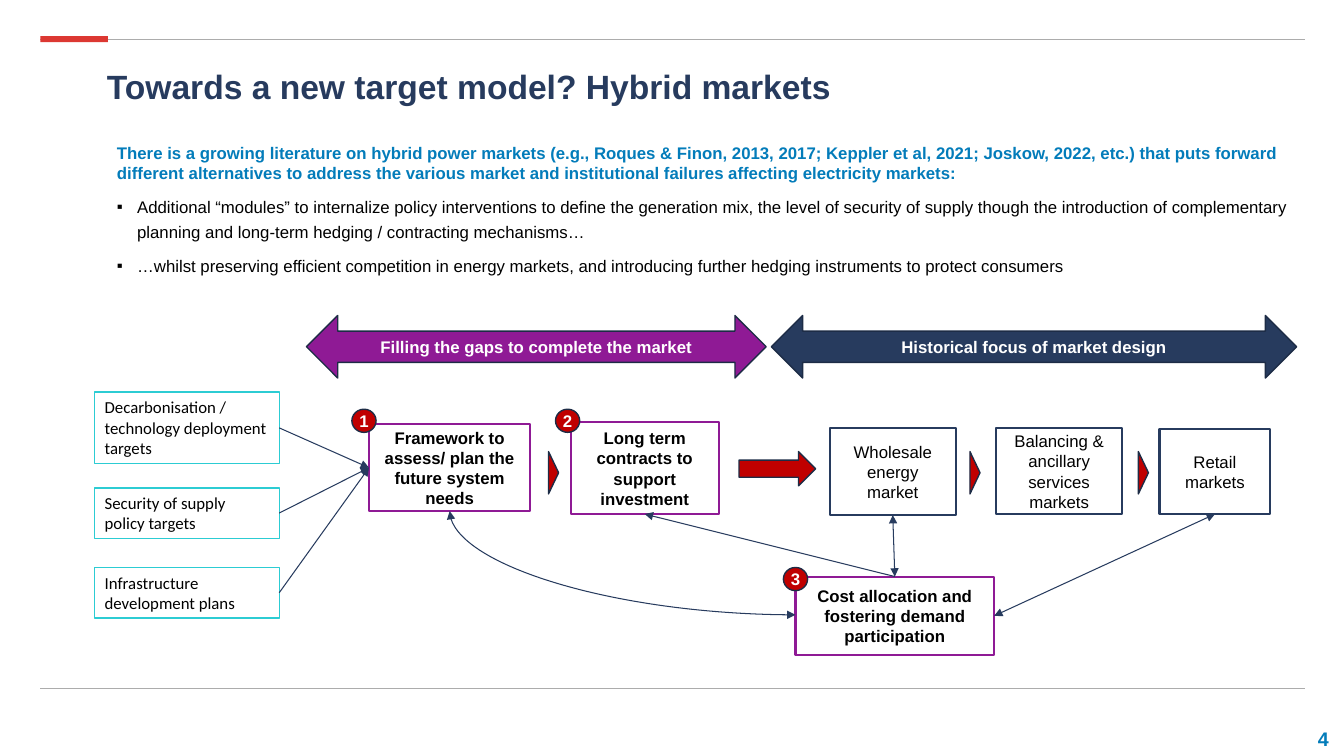
"""Build the slide on hybrid electricity markets."""
from dataclasses import dataclass

from lxml import etree
from pptx import Presentation
from pptx.dml.color import RGBColor
from pptx.enum import shapes as es, text as et
from pptx.oxml.ns import qn
from pptx.util import Inches, Pt

KIND = es.MSO_SHAPE
LINK = es.MSO_CONNECTOR
ALIGN = et.PP_ALIGN
ANCHOR = et.MSO_ANCHOR
TOP, LEFT, BOTTOM, RIGHT = range(4)


@dataclass(frozen=True)
class Theme:
    navy: str = "273B5E"
    edge: str = "1D2C46"
    plum: str = "8F1A95"
    teal: str = "2CCCD3"
    blue: str = "037CBA"
    red: str = "C00000"
    accent: str = "DC3832"
    grey: str = "ACACAC"
    black: str = "000000"
    white: str = "FFFFFF"
    face: str = "Arial"
    alt: str = "Calibri"
    head: int = 24
    page: int = 14
    body: int = 12


class Board:
    def __init__(self, deck, theme):
        self.theme = theme
        self.slide = deck.slides.add_slide(deck.slide_layouts[1])
        self.shapes = self.slide.shapes

    def style(self, para, color, size=None, bold=False, face=None):
        font = para.font
        font.name = face or self.theme.face
        font.size = Pt(size or self.theme.body)
        font.bold = bold
        font.color.rgb = RGBColor.from_string(color)

    def place(self, item, *spot):
        item.left, item.top, item.width, item.height = map(Inches, spot)

    def inset(self, frame, gap=0):
        frame.margin_left = frame.margin_right = Inches(gap)
        frame.margin_top = frame.margin_bottom = Inches(gap)

    def title(self, words, *spot):
        item = self.shapes.title
        self.place(item, *spot)
        frame = item.text_frame
        frame.text = words
        frame.vertical_anchor = ANCHOR.TOP
        frame.auto_size = et.MSO_AUTO_SIZE.NONE
        self.inset(frame)
        para = frame.paragraphs[0]
        para.alignment = ALIGN.LEFT
        para.line_spacing = 0.9
        self.style(para, self.theme.navy, self.theme.head, True)

    def body(self, lead, points, *spot):
        item = self.slide.placeholders[1]
        self.place(item, *spot)
        frame = item.text_frame
        frame.auto_size = et.MSO_AUTO_SIZE.SHAPE_TO_FIT_TEXT
        frame.text = "\n".join([lead, *points])
        for rank, para in enumerate(frame.paragraphs):
            para.level = min(rank, 1)
            para.space_before = Pt(0)
            para.space_after = Pt(6)
            para.line_spacing = 1.25 if rank else 1.02
            self.bullet(para, 0.2 if rank else 0)
            color = self.theme.black if rank else self.theme.blue
            self.style(para, color, bold=not rank)

    def bullet(self, para, dent):
        props = para._p.get_or_add_pPr()
        props.set("marL", str(Inches(dent)))
        props.set("indent", str(-Inches(dent)))
        if not dent:
            etree.SubElement(props, qn("a:buNone"))
            return
        tint = etree.SubElement(props, qn("a:buClr"))
        etree.SubElement(tint, qn("a:srgbClr"), val=self.theme.black)
        etree.SubElement(props, qn("a:buFont"), typeface=self.theme.face)
        etree.SubElement(props, qn("a:buChar"), char="▪")

    def shape(self, kind, spot, fill, line=None, width=1, turn=0):
        item = self.shapes.add_shape(kind, *map(Inches, spot))
        item.shadow.inherit = False
        item.rotation = turn
        item.fill.solid()
        item.fill.fore_color.rgb = RGBColor.from_string(fill)
        if line:
            item.line.color.rgb = RGBColor.from_string(line)
            item.line.width = Pt(width)
        else:
            item.line.fill.background()
        return item

    def label(self, item, words, color, bold=False):
        frame = item.text_frame
        frame.word_wrap = True
        frame.vertical_anchor = ANCHOR.MIDDLE
        para = frame.paragraphs[0]
        para.text = words
        para.alignment = ALIGN.CENTER
        self.style(para, color, bold=bold)

    def box(self, words, spot, line, bold=False):
        item = self.shape(KIND.RECTANGLE, spot, self.theme.white, line, 1.5)
        self.label(item, words, self.theme.black, bold)
        return item

    def target(self, words, top, high):
        item = self.shape(KIND.RECTANGLE, (0.94, top, 1.83, high),
                          self.theme.white, self.theme.teal)
        frame = item.text_frame
        frame.word_wrap = True
        frame.vertical_anchor = ANCHOR.TOP
        para = frame.paragraphs[0]
        para.text = words
        para.alignment = ALIGN.LEFT
        self.style(para, self.theme.black, face=self.theme.alt)
        return item

    def banner(self, words, left, wide, fill):
        item = self.shape(KIND.LEFT_RIGHT_ARROW, (left, 3.13, wide, 0.62),
                          fill, self.theme.edge)
        self.label(item, words, self.theme.white, True)

    def badge(self, words, left, top):
        item = self.shape(KIND.OVAL, (left, top, 0.24, 0.23),
                          self.theme.red, self.theme.edge)
        self.inset(item.text_frame)
        self.label(item, words, self.theme.white, True)

    def line(self, spot=(0, 0, 0, 0), kind=LINK.STRAIGHT, color=None,
             width=0.75, ends=()):
        item = self.shapes.add_connector(kind, *map(Inches, spot))
        item.line.color.rgb = RGBColor.from_string(color or self.theme.navy)
        item.line.width = Pt(width)
        for end in ends:
            etree.SubElement(item.line._get_or_add_ln(), qn(f"a:{end}End"),
                             type="triangle")
        etree.SubElement(item._element.spPr, qn("a:effectLst"))
        return item

    def join(self, start, out, stop, into, ends=("tail",)):
        item = self.line(ends=ends)
        item.begin_connect(start, out)
        item.end_connect(stop, into)

    def curve(self, *spot):
        item = self.line(kind=LINK.CURVE, ends=("head", "tail"))
        self.place(item, *spot)
        props = item._element.spPr
        props.find(qn("a:prstGeom")).set("prst", "curvedConnector2")
        frame = props.find(qn("a:xfrm"))
        frame.set("rot", str(270 * 60000))
        frame.set("flipH", "1")

    def number(self, words, *spot):
        frame = self.shapes.add_textbox(*map(Inches, spot)).text_frame
        frame.word_wrap = True
        frame.vertical_anchor = ANCHOR.BOTTOM
        self.inset(frame)
        para = frame.paragraphs[0]
        para.text = words
        para.alignment = ALIGN.RIGHT
        self.style(para, self.theme.blue, self.theme.page, True)


def main():
    deck = Presentation()
    deck.slide_width, deck.slide_height = Inches(13.33), Inches(7.5)
    t = Theme()
    b = Board(deck, t)
    for y in (6.83, 0.39):
        b.line((0.4, y, 12.94, y), color=t.grey, width=0.5)
    b.shape(KIND.RECTANGLE, (0.4, 0.36, 0.67, 0.06), t.accent)
    b.title("Towards a new target model? Hybrid markets", 1.06, 0.7, 11.88, 0.38)
    b.body(
        "There is a growing literature on hybrid power markets (e.g., Roques & Finon, 2013, 2017; Keppler et al, 2021; Joskow, 2022, etc.) that puts forward different alternatives to address the various market and institutional failures affecting electricity markets:",
        ["Additional “modules” to internalize policy interventions to define the generation mix, the level of security of supply though the introduction of complementary planning and long-term hedging / contracting mechanisms…",
         "…whilst preserving efficient competition in energy markets, and introducing further hedging instruments to protect consumers"],
        1.06, 1.36, 11.94, 1.41)
    b.number("4", 10.18, 7.05, 3, 0.4)

    b.banner("Filling the gaps to complete the market", 3.04, 4.56, t.plum)
    b.banner("Historical focus of market design", 7.65, 5.21, t.navy)
    cost = b.box("Cost allocation and fostering demand participation",
                 (7.89, 5.72, 1.97, 0.78), t.plum, True)
    plan = b.box("Framework to assess/ plan the future system needs",
                 (3.66, 4.21, 1.6, 0.86), t.plum, True)
    deal = b.box("Long term contracts to support investment",
                 (5.66, 4.19, 1.47, 0.91), t.plum, True)
    whole = b.box("Wholesale energy market", (8.23, 4.25, 1.25, 0.86), t.navy)
    b.box("Balancing & ancillary services markets", (9.88, 4.25, 1.25, 0.85), t.navy)
    retail = b.box("Retail markets", (11.5, 4.26, 1.1, 0.84), t.navy)

    for words, top, high in (
            ("Decarbonisation / technology deployment targets", 3.89, 0.71),
            ("Security of supply policy targets", 4.84, 0.5),
            ("Infrastructure development plans", 5.63, 0.5)):
        b.join(b.target(words, top, high), RIGHT, plan, LEFT)
    both = ("head", "tail")
    b.join(retail, BOTTOM, cost, RIGHT, both)
    b.join(whole, BOTTOM, cost, TOP, both)
    b.join(cost, TOP, deal, BOTTOM)
    b.curve(5.66, 3.87, 1.03, 3.43)

    for left in (5.28, 9.46, 11.13):
        b.shape(KIND.ISOSCELES_TRIANGLE, (left, 4.64, 0.42, 0.1), t.red, t.edge, turn=90)
    b.shape(KIND.RIGHT_ARROW, (7.33, 4.48, 0.76, 0.34), t.red, t.edge)
    for words, left, top in (("1", 3.49, 4.06), ("2", 5.51, 4.06), ("3", 7.77, 5.63)):
        b.badge(words, left, top)
    deck.save("out.pptx")


if __name__ == "__main__":
    main()
